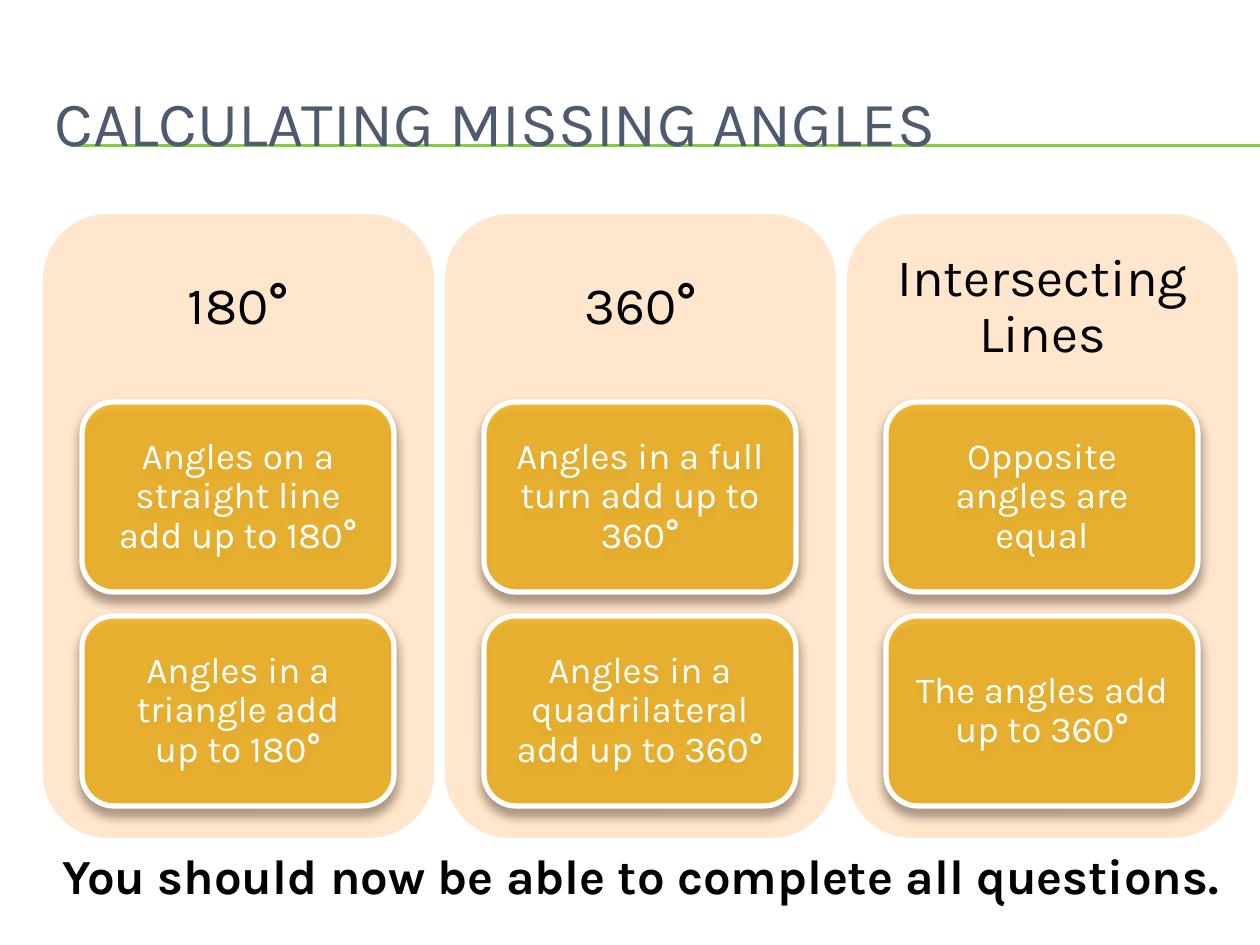
from dataclasses import dataclass

from lxml.etree import SubElement
from pptx import Presentation
from pptx.dml.color import RGBColor
from pptx.enum.shapes import MSO_CONNECTOR, MSO_SHAPE
from pptx.enum.text import MSO_ANCHOR, MSO_AUTO_SIZE, PP_ALIGN
from pptx.oxml.ns import qn
from pptx.util import Emu, Pt


@dataclass(frozen=True)
class Theme:
    """Colours, font and type sizes of the slide."""

    font: str = "Karla"
    title: str = "4E5B6F"
    rule: str = "7FD13B"
    panel: str = "FFE6CC"
    card: str = "FEB80A"
    shadow: str = "4E3B30"
    dark: str = "000000"
    light: str = "FFFFFF"
    title_size: int = 36
    heading_size: int = 30
    closing_size: int = 28
    card_size: int = 21


THEME = Theme()
DEGREE = "°"
COLUMNS = [
    ("180°", ["Angles on a straight line add up to 180°",
              "Angles in a triangle add up to 180°"]),
    ("360°", ["Angles in a full turn add up to 360°",
              "Angles in a quadrilateral add up to 360°"]),
    ("Intersecting Lines", ["Opposite angles are equal",
                            "The angles add up to 360°"]),
]
PANEL_LEFT, PANEL_TOP, PANEL_WIDTH, PANEL_HEIGHT = 43, 214, 391, 624
CARD_TOP, CARD_WIDTH, CARD_HEIGHT = 402, 312, 190
COLUMN_STEP, CARD_STEP = 402, 214


def px(length):
    """Turn whole pixels at 126 to the inch into EMU."""
    return Emu(round(length * 914400 / 126))


def box(left, top, width, height):
    """Return a pixel rectangle in EMU."""
    return px(left), px(top), px(width), px(height)


def write(shape, text, *, size, color, bold=False, align=PP_ALIGN.CENTER,
          anchor=MSO_ANCHOR.MIDDLE, inset=None, spacing=None):
    """Write one paragraph, with a closing degree sign in bold."""
    frame = shape.text_frame
    frame.word_wrap = True
    frame.auto_size = MSO_AUTO_SIZE.NONE
    frame.vertical_anchor = anchor
    if inset is not None:
        frame.margin_left = frame.margin_right = px(inset)
        frame.margin_top = frame.margin_bottom = px(inset)
    paragraph = frame.paragraphs[0]
    paragraph.alignment = align
    paragraph.line_spacing = spacing
    body, sign, _ = text.partition(DEGREE)
    for part, heavy in ((body, bold), (sign, True)):
        if part:
            run = paragraph.add_run()
            run.text = part
            run.font.name = THEME.font
            run.font.size = Pt(size)
            run.font.bold = heavy
            run.font.color.rgb = RGBColor.from_string(color)


def add_round_box(slide, bounds, fill):
    """Add a rounded rectangle with a plain fill."""
    shape = slide.shapes.add_shape(MSO_SHAPE.ROUNDED_RECTANGLE, *box(*bounds))
    shape.shadow.inherit = False
    shape.fill.solid()
    shape.fill.fore_color.rgb = RGBColor.from_string(fill)
    shape.line.fill.background()
    return shape


def add_card(slide, left, top, text):
    """Add a translucent card with a white border and a soft shadow."""
    card = add_round_box(slide, (left, top, CARD_WIDTH, CARD_HEIGHT), THEME.card)
    card.line.color.rgb = RGBColor.from_string(THEME.light)
    card.line.width = Pt(3)
    properties = card._element.spPr
    fill_color = properties.find(qn("a:solidFill")).find(qn("a:srgbClr"))
    SubElement(fill_color, qn("a:alpha"), val="70000")
    shadow = SubElement(properties.find(qn("a:effectLst")), qn("a:outerShdw"),
                        blurRad=str(Pt(6)), dist=str(Pt(4)), dir="5400000",
                        rotWithShape="0")
    shadow_color = SubElement(shadow, qn("a:srgbClr"), val=THEME.shadow)
    SubElement(shadow_color, qn("a:alpha"), val="60000")
    write(card, text, size=THEME.card_size, color=THEME.light, inset=20, spacing=0.9)


def add_text(slide, bounds, text, **style):
    """Add a text box."""
    write(slide.shapes.add_textbox(*box(*bounds)), text, **style)


def add_column(slide, left, heading, rules):
    """Add a panel with its heading and its cards."""
    add_round_box(slide, (left, PANEL_TOP, PANEL_WIDTH, PANEL_HEIGHT), THEME.panel)
    add_text(slide, (left + 9, PANEL_TOP + 9, PANEL_WIDTH - 18, 169), heading,
             size=THEME.heading_size, color=THEME.dark, inset=29, spacing=0.9)
    card_left = left + (PANEL_WIDTH - CARD_WIDTH) // 2
    for row, rule in enumerate(rules):
        add_card(slide, card_left, CARD_TOP + row * CARD_STEP, rule)


def add_rule(slide, left, right, top):
    """Add a thin horizontal line behind everything else."""
    line = slide.shapes.add_connector(MSO_CONNECTOR.STRAIGHT, px(left), px(top),
                                      px(right), px(top))
    line.line.color.rgb = RGBColor.from_string(THEME.rule)
    line.line.width = Pt(0.75)
    SubElement(line._element.spPr, qn("a:effectLst"))
    slide.shapes._spTree.insert(2, line._element)


def set_title(slide, bounds, text):
    """Place and format the title placeholder."""
    title = slide.shapes.title
    title.left, title.top, title.width, title.height = box(*bounds)
    write(title, text, size=THEME.title_size, color=THEME.title,
          align=PP_ALIGN.LEFT)


def main():
    """Build the slide and save it."""
    presentation = Presentation()
    presentation.slide_width, presentation.slide_height = px(1260), px(945)
    slide = presentation.slides.add_slide(presentation.slide_layouts[5])
    set_title(slide, (42, 63, 1197, 116), "CALCULATING MISSING ANGLES")
    for top in (145, 146):
        add_rule(slide, 71, 1260, top)
    for index, (heading, rules) in enumerate(COLUMNS):
        add_column(slide, PANEL_LEFT + index * COLUMN_STEP, heading, rules)
    add_text(slide, (42, 839, 1197, 72),
             "You should now be able to complete all questions.",
             size=THEME.closing_size, color=THEME.dark, bold=True,
             anchor=MSO_ANCHOR.TOP)
    presentation.save("out.pptx")


if __name__ == "__main__":
    main()
